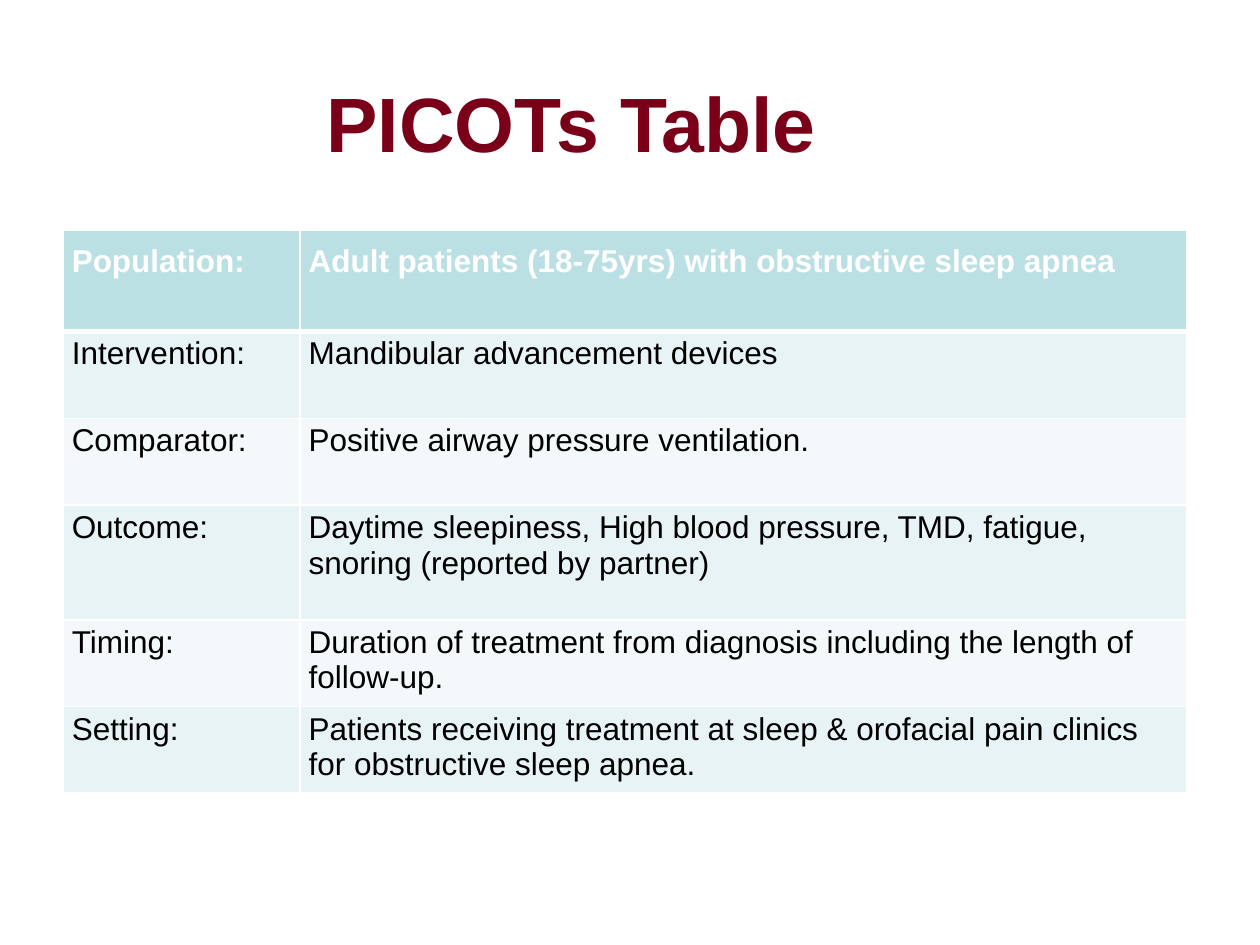
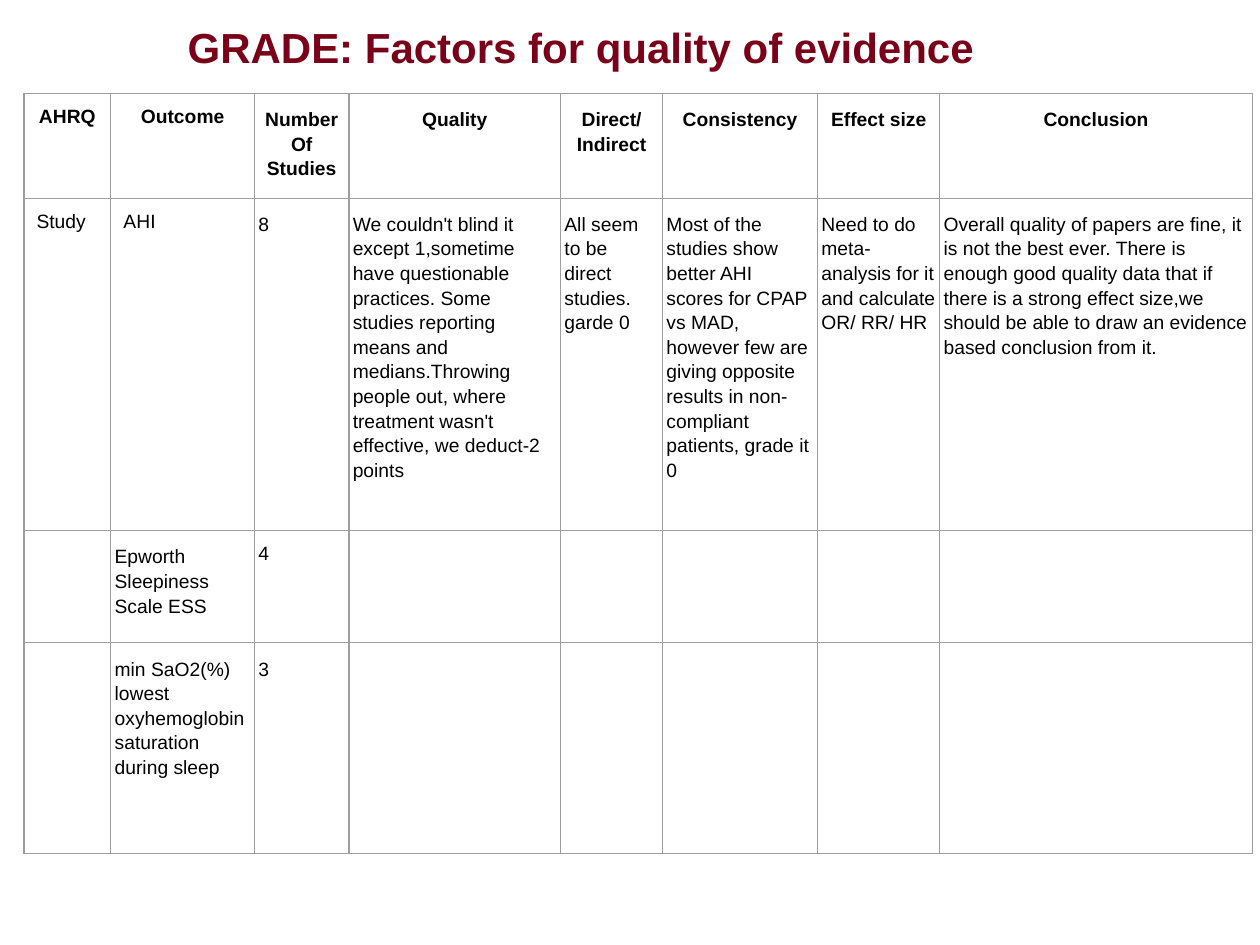
from lxml import etree
from pptx import Presentation
from pptx.dml.color import RGBColor
from pptx.enum.text import MSO_ANCHOR, PP_ALIGN
from pptx.oxml.ns import qn
from pptx.util import Inches, Pt

MIDDLE = MSO_ANCHOR.MIDDLE
TOP = MSO_ANCHOR.TOP
LEFT = PP_ALIGN.LEFT
CENTER = PP_ALIGN.CENTER

FONT = "Arial"
MAROON = "7A0019"
WHITE = "FFFFFF"
BLACK = "000000"
TEAL = "BBE0E3"
BANDS = ("E7F3F4", "F3F9FA")
GREY = "9E9E9E"

PICOTS_ROWS = [
    ("Population:", "Adult patients (18-75yrs) with obstructive sleep apnea"),
    ("Intervention:", "Mandibular advancement devices"),
    ("Comparator:", "Positive airway pressure ventilation."),
    ("Outcome:", "Daytime sleepiness, High blood pressure, TMD, fatigue, "
                 "snoring (reported by partner)"),
    ("Timing:", "Duration of treatment from diagnosis including the length of follow-up."),
    ("Setting:", "Patients receiving treatment at sleep & orofacial pain clinics "
                 "for obstructive sleep apnea."),
]

# "\n" starts a new paragraph, "\v" a new line in the same paragraph
GRADE_ROWS = [
    ("AHRQ", "Outcome", "Number\vOf Studies", "Quality", "Direct/ Indirect",
     "Consistency", "Effect size", "Conclusion"),
    ("Study", "AHI", "8",
     "We couldn't blind it except 1,sometime have questionable practices. "
     "Some studies reporting means and medians.Throwing people out, where "
     "treatment wasn't effective, we deduct-2 points",
     "All seem to be direct studies. garde 0",
     "Most of the studies show better AHI scores for CPAP vs MAD, however few "
     "are giving opposite results in non-compliant patients, grade it 0",
     "Need to do meta-analysis for it and calculate OR/ RR/ HR",
     "Overall quality of papers are fine, it is not the best ever. There is "
     "enough good quality data that if there is a strong effect size,we should "
     "be able to draw an evidence based conclusion from it."),
    ("", "Epworth Sleepiness\nScale ESS", "4", "", "", "", "", ""),
    ("", "min SaO2(%) lowest oxyhemoglobin\nsaturation during sleep", "3",
     "", "", "", "", ""),
]


def color(hex_string):
    return RGBColor.from_string(hex_string)


class Deck:
    """Holds the shared style and the current slide."""

    def __init__(self):
        self.presentation = Presentation()
        self.presentation.slide_width = Inches(10)
        self.presentation.slide_height = Inches(7.5)
        self.slide = None

    def add_slide(self):
        self.slide = self.presentation.slides.add_slide(self.presentation.slide_layouts[6])

    def add_text(self, text_frame, text, size, text_color=BLACK, bold=False,
                 align=LEFT, spacing=1.0):
        for index, line in enumerate(text.split("\n")):
            paragraph = text_frame.add_paragraph() if index else text_frame.paragraphs[0]
            paragraph.alignment = align
            paragraph.line_spacing = spacing
            for part_index, part in enumerate(line.split("\v")):
                if part_index:
                    paragraph.add_line_break()
                run = paragraph.add_run()
                run.text = part
                run.font.name = FONT
                run.font.size = Pt(size)
                run.font.bold = bold
                run.font.color.rgb = color(text_color)

    def title(self, text, left, top, width, height, size):
        box = self.slide.shapes.add_textbox(
            Inches(left), Inches(top), Inches(width), Inches(height))
        text_frame = box.text_frame
        text_frame.word_wrap = True
        text_frame.vertical_anchor = MIDDLE
        self.add_text(text_frame, text, size, MAROON, True, CENTER)

    def table(self, left, top, widths, heights):
        frame = self.slide.shapes.add_table(
            len(heights), len(widths), Inches(left), Inches(top),
            Inches(sum(widths)), Inches(sum(heights)))
        table = frame.table
        table.horz_banding = False
        for column, width in zip(table.columns, widths):
            column.width = Inches(width)
        for row, height in zip(table.rows, heights):
            row.height = Inches(height)
        return table

    def style_cell(self, cell, side_margin, top_margin, bottom_margin,
                   line_color, line_widths, fill=None):
        """Line widths are given for left, right, top and bottom."""
        cell.margin_left = cell.margin_right = Inches(side_margin)
        cell.margin_top = Inches(top_margin)
        cell.margin_bottom = Inches(bottom_margin)
        cell.vertical_anchor = TOP
        properties = cell._tc.get_or_add_tcPr()
        for side, width in zip("LRTB", line_widths):
            line = etree.SubElement(properties, qn(f"a:ln{side}"), w=str(Pt(width)))
            solid = etree.SubElement(line, qn("a:solidFill"))
            etree.SubElement(solid, qn("a:srgbClr"), val=line_color)
        if fill:
            cell.fill.solid()
            cell.fill.fore_color.rgb = color(fill)
        else:
            cell.fill.background()


def build_picots(deck):
    deck.add_slide()
    deck.title("PICOTs Table", 0.79, 0.34, 7.49, 1.25, 44)
    table = deck.table(0.5, 1.83, [1.88, 7.04], [0.8, 0.69, 0.69, 0.91, 0.69, 0.65])
    for row, texts in enumerate(PICOTS_ROWS):
        header = row == 0
        fill = TEAL if header else BANDS[(row - 1) % 2]
        lines = (1, 1, 3 if row == 1 else 1, 3 if header else 1)
        for column, text in enumerate(texts):
            cell = table.cell(row, column)
            deck.style_cell(cell, 0.07, 0.11 if header else 0.04, 0.04, WHITE, lines, fill)
            deck.add_text(cell.text_frame, text, 18, WHITE if header else BLACK, header)


def build_grade(deck):
    deck.add_slide()
    deck.title("GRADE: Factors for quality of evidence", 0.99, 0, 7.24, 0.74, 24)
    table = deck.table(0.19, 0.74, [0.69, 1.14, 0.75, 1.68, 0.81, 1.23, 0.97, 2.48],
                       [0.82, 2.64, 0.89, 1.67])
    for row, texts in enumerate(GRADE_ROWS):
        header = row == 0
        for column, text in enumerate(texts):
            cell = table.cell(row, column)
            # The first two columns of the upper rows are set wider and tighter
            label = row < 2 and column < 2
            deck.style_cell(cell, 0.1 if label else 0.03, 0.1, 0.1, GREY, [0.75] * 4)
            if text:
                spacing = 1.0 if label or text == "4" else 1.15
                deck.add_text(cell.text_frame, text, 11, bold=header,
                              align=CENTER if header else LEFT, spacing=spacing)


def main():
    deck = Deck()
    build_picots(deck)
    build_grade(deck)
    deck.presentation.save("out.pptx")


if __name__ == "__main__":
    main()
